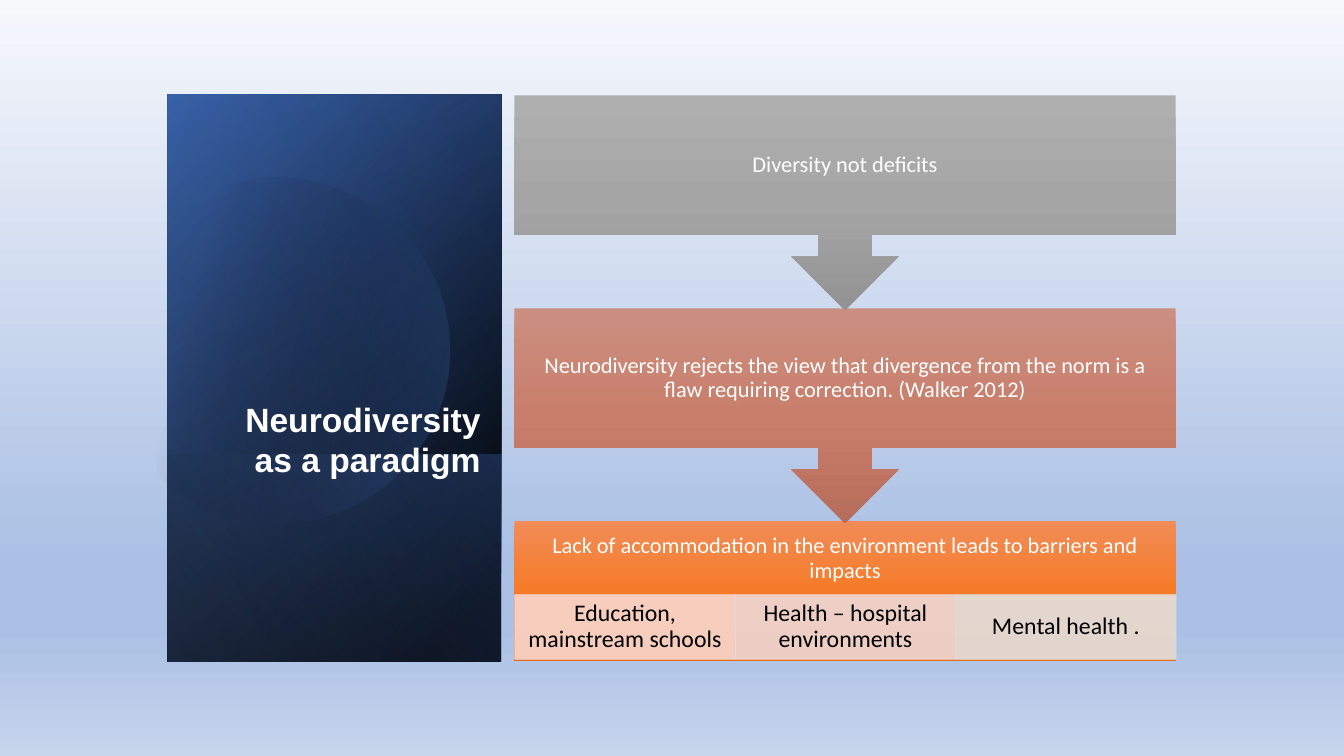
from math import cos, sin, radians
from lxml.etree import SubElement
from pptx import Presentation
from pptx.dml.color import RGBColor
from pptx.enum.shapes import MSO_SHAPE
from pptx.enum.text import MSO_ANCHOR, PP_ALIGN, MSO_AUTO_SIZE
from pptx.oxml.ns import qn
from pptx.util import Pt

TITLE = ["Neurodiversity", "as a paradigm"]
STEPS = [
    ("Diversity not deficits", "gray"),
    ("Neurodiversity rejects the view that divergence from the norm is a flaw "
     "requiring correction. (Walker 2012)", "rose"),
    ("Lack of accommodation in the environment leads to barriers and impacts", "orange"),
]
AREAS = [
    ("Education, mainstream schools", "peach"),
    ("Health – hospital environments", "blush"),
    ("Mental health .", "mist"),
]
COLORS = {
    "white": "FFFFFF", "black": "000000", "navy": "2F5597", "blue": "4472C4",
    "sky": "8FAADC", "pale": "F6F8FC", "mid": "ABC0E4", "soft": "C7D5ED",
    "gray1": "AFAFAF", "gray2": "A5A5A5", "gray3": "939393",
    "rose1": "CB8F81", "rose2": "C97E6B", "rose3": "B76D5B",
    "orange1": "F18C57", "orange2": "F67B28", "orange3": "E56C19",
    "peach": "F8D7CE", "blush": "EDD9D7", "mist": "E1E1E1",
}
PANEL = (119.5, 67.5, 238.5, 405)
LOWER = (119.5, 324.7, 238.5, 147.8)
SHADES = [
    (PANEL, 50, [(8, "black", 100), (100, "navy", 100)]),
    (PANEL, 30, [(0, "black", 0), (99, "blue", 46)]),
    (LOWER, 130, [(2, "blue", 29), (100, "black", 30)]),
]
GLOW = (PANEL, 120, [(0, "black", 0), (99, "sky", 11)])
DISC = (90.7, 124.6, 230.4, 247)
TURN = 16.1
CURVE = [
    [(200.2, 126.7)],
    [(252.7, 128.2), (301, 162.7), (316.1, 216)],
    [(334.8, 281.5), (297.4, 349.9), (231.8, 369.4)],
    [(190.8, 380.9), (149, 370.8), (118.1, 344.9)],
    [(111.6, 339.1)],
    [(111.6, 162)],
    [(120.2, 154.8)],
    [(132.5, 144.7), (146.9, 136.8), (163.4, 131.8)],
    [(175.7, 128.2), (187.9, 126.7), (200.2, 126.7)],
]
LEFT, TOP, WIDE, PITCH = 367.4, 68.2, 472.4, 152.1
CALL, BASE, HEAD, CELL = 153.4, 100, 52.4, 46.2


def color(name):
    return RGBColor.from_string(COLORS[name])


def blend(fill, angle, stops):
    fill.solid()
    props = fill._xPr
    old = props.find(qn("a:solidFill"))
    grad = props.makeelement(qn("a:gradFill"), {"rotWithShape": "1"})
    rows = SubElement(grad, qn("a:gsLst"))
    for spot, name, alpha in stops:
        stop = SubElement(rows, qn("a:gs"), pos=str(spot * 1000))
        tone = SubElement(stop, qn("a:srgbClr"), val=COLORS[name])
        if alpha < 100:
            SubElement(tone, qn("a:alpha"), val=str(alpha * 1000))
    SubElement(grad, qn("a:lin"), ang=str(angle * 60000), scaled="0")
    props.replace(old, grad)


def tint(fill, name, alpha):
    fill.solid()
    fill.fore_color.rgb = color(name)
    node = fill._xPr.find(qn("a:solidFill")).find(qn("a:srgbClr"))
    SubElement(node, qn("a:alpha"), val=str(alpha * 1000))


def block(slide, kind, x, y, w, h):
    shape = slide.shapes.add_shape(kind, Pt(x), Pt(y), Pt(w), Pt(h))
    shape.shadow.inherit = False
    shape.line.fill.background()
    return shape


def shade(slide, box, angle, stops):
    x, y, w, h = box
    shape = block(slide, MSO_SHAPE.RECTANGLE, x + (w - h) / 2, y + (h - w) / 2, h, w)
    shape.rotation = 90
    shape._element.spPr.find(qn("a:xfrm")).set("flipH", "1")
    blend(shape.fill, angle, stops)


def spin(spot):
    x, y, w, h = DISC
    dx, dy = spot[0] - x - w / 2, spot[1] - y - h / 2
    c, s = cos(radians(TURN)), sin(radians(TURN))
    return Pt(w / 2 + dx * c - dy * s), Pt(h / 2 + dx * s + dy * c)


def disc(slide):
    x, y, w, h = [Pt(n) for n in DISC]
    ends = [spin(part[-1]) for part in CURVE]
    form = slide.shapes.build_freeform(*ends[0])
    form.add_line_segments(ends[1:], close=True)
    shape = form.convert_to_shape()
    shape.left, shape.top, shape.width, shape.height = x, y, w, h
    route = next(shape._element.iter(qn("a:pathLst")))[0]
    route.set("w", str(w))
    route.set("h", str(h))
    for old in list(route):
        route.remove(old)
    for i, part in enumerate(CURVE):
        tag = "a:moveTo" if i == 0 else "a:cubicBezTo" if len(part) == 3 else "a:lnTo"
        node = SubElement(route, qn(tag))
        for spot in part:
            px, py = spin(spot)
            SubElement(node, qn("a:pt"), x=str(px), y=str(py))
    SubElement(route, qn("a:close"))
    shape.rotation = -TURN
    shape.shadow.inherit = False
    shape.line.fill.background()
    blend(shape.fill, 30, [(29, "black", 0), (100, "blue", 43)])


def write(shape, text, size, name, side, edge, foot=0):
    frame = shape.text_frame
    frame.word_wrap = True
    frame.vertical_anchor = MSO_ANCHOR.MIDDLE
    frame.margin_left = frame.margin_right = Pt(side)
    frame.margin_top, frame.margin_bottom = Pt(edge), Pt(edge + foot)
    para = frame.paragraphs[0]
    para.alignment = PP_ALIGN.CENTER
    para.line_spacing = 0.9
    run = para.add_run()
    run.text = text
    run.font.name, run.font.size = "Calibri", Pt(size)
    run.font.color.rgb = color(name)


def head(slide):
    title = slide.shapes.title
    slide.shapes._spTree.append(title._element)
    title.left, title.top = Pt(154.7), Pt(166.7)
    title.width, title.height = Pt(195.8), Pt(179.3)
    frame = title.text_frame
    frame.word_wrap = True
    frame.auto_size = MSO_AUTO_SIZE.NONE
    frame.vertical_anchor = MSO_ANCHOR.BOTTOM
    para = frame.paragraphs[0]
    para.alignment = PP_ALIGN.RIGHT
    for i, line in enumerate(TITLE):
        if i:
            para.add_line_break()
        run = para.add_run()
        run.text = line
        run.font.name, run.font.size, run.font.bold = "Arial", Pt(24), True
        run.font.color.rgb = color("white")


def flow(slide):
    last = len(STEPS) - 1
    for i in range(last, -1, -1):
        text, hue = STEPS[i]
        end = i == last
        kind = MSO_SHAPE.RECTANGLE if end else MSO_SHAPE.DOWN_ARROW_CALLOUT
        step = block(slide, kind, LEFT, TOP + i * PITCH, WIDE, BASE if end else CALL)
        blend(step.fill, 90, [(k * 50, f"{hue}{k + 1}", 100) for k in range(3)])
        write(step, text, 16, "white", 9, 9, BASE - HEAD - 1 if end else 0)
        if end:
            areas(slide, TOP + i * PITCH + HEAD)


def areas(slide, y):
    w = WIDE / len(AREAS)
    for i, (text, hue) in enumerate(AREAS):
        cell = block(slide, MSO_SHAPE.RECTANGLE, LEFT + 0.3 + i * w, y, w, CELL)
        tint(cell.fill, hue, 90)
        tint(cell.line.fill, hue, 90)
        cell.line.width = Pt(0.5)
        write(cell, text, 17, "black", 9, 1.5)


def main():
    deck = Presentation()
    deck.slide_width, deck.slide_height = Pt(960), Pt(540)
    slide = deck.slides.add_slide(deck.slide_layouts[5])
    blend(slide.background.fill, 90, [(0, "pale", 100), (74, "mid", 100),
                                      (83, "mid", 100), (100, "soft", 100)])
    for item in SHADES:
        shade(slide, *item)
    disc(slide)
    shade(slide, *GLOW)
    head(slide)
    flow(slide)
    deck.save("out.pptx")


if __name__ == "__main__":
    main()
